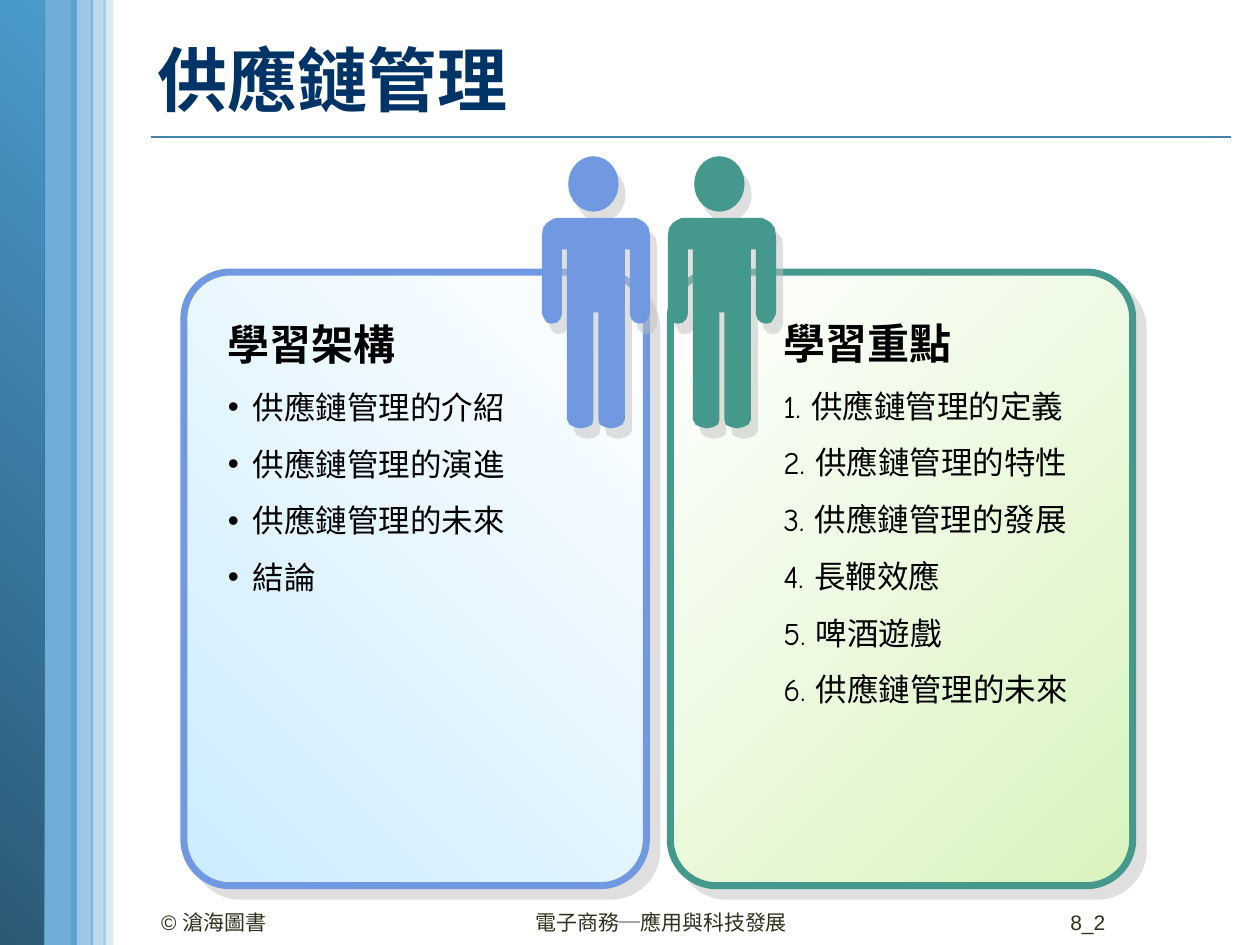
from dataclasses import dataclass
from math import cos, pi, sin

from lxml import etree
from pptx import Presentation
from pptx.dml.color import RGBColor
from pptx.enum.shapes import MSO_CONNECTOR, MSO_SHAPE
from pptx.enum.text import MSO_ANCHOR, MSO_AUTO_SIZE, PP_ALIGN
from pptx.oxml.ns import qn
from pptx.util import Inches, Pt

LEFT, RIGHT = PP_ALIGN.LEFT, PP_ALIGN.RIGHT
MIDDLE = MSO_ANCHOR.MIDDLE
GROW = MSO_AUTO_SIZE.SHAPE_TO_FIT_TEXT
RECT, ROUND = MSO_SHAPE.RECTANGLE, MSO_SHAPE.ROUNDED_RECTANGLE
STRAIGHT = MSO_CONNECTOR.STRAIGHT

COLORS = {
    "band": "4A9ACC", "deep": "2B5976", "rule": "4582A7", "title": "003366",
    "text": "000000", "foot": "30311D", "shade": "C0C0C0", "white": "FFFFFF",
    "blue": "7099E2", "sky": "CCECFF", "green": "44988C", "lime": "D8F4BE",
}
FONT = "Comic Neue"

# Left half of the body: distance from its axis, height on the slide
HALF = [
    (.29, 1.73), (.32, 1.73), (.36, 1.75), (.39, 1.77), (.42, 1.81), (.43, 1.88),
    (.43, 2.49), (.41, 2.53), (.39, 2.56), (.35, 2.57), (.31, 2.56), (.28, 2.53),
    (.27, 2.49), (.27, 1.98), (.23, 1.98), (.23, 3.33), (.21, 3.37), (.17, 3.39),
    (.12, 3.4), (.07, 3.39), (.03, 3.37), (.02, 3.33), (.02, 2.48),
]


@dataclass
class Band:
    left: float
    top: float
    width: float
    height: float
    alpha: int


@dataclass
class Panel:
    left: float
    color: str
    stops: tuple[str, str]
    angle: int
    axis: float
    box: tuple[float, float, float, float]
    head: str
    items: list[str]
    indent: float
    bullet: bool


@dataclass
class Footer:
    left: float
    width: float
    text: str
    align: PP_ALIGN


BANDS = [
    Band(.3, 0, .31, 7.53, 80), Band(.82, -.02, .08, 7.52, 20),
    Band(.56, 0, .18, 7.51, 54), Band(.72, 0, .12, 7.52, 37),
]
PANELS = [
    Panel(1.46, "blue", ("sky", "white"), 45, 4.73, (1.71, 2.28, 3.1, 2.52),
          "學習架構",
          ["供應鏈管理的介紹", "供應鏈管理的演進", "供應鏈管理的未來", "結論"],
          .2, True),
    Panel(5.32, "green", ("white", "lime"), 315, 5.73, (6.12, 2.27, 2.83, 3.48),
          "學習重點",
          ["1. 供應鏈管理的定義", "2. 供應鏈管理的特性", "3. 供應鏈管理的發展",
           "4. 長鞭效應", "5. 啤酒遊戲", "6. 供應鏈管理的未來"],
          .38, False),
]
FOOTERS = [
    Footer(1.18, 2.33, "© 滄海圖書", LEFT),
    Footer(4.15, 2.36, "電子商務─應用與科技發展", LEFT),
    Footer(8.15, .72, "8_2", RIGHT),
]


def tint(name: str) -> RGBColor:
    return RGBColor.from_string(COLORS[name])


def style(para, size: int, color: str, font: str = FONT, bold: bool = False) -> None:
    para.font.size, para.font.name, para.font.bold = Pt(size), font, bold
    para.font.color.rgb = tint(color)


def paint(shape, color: str, alpha: int = 100) -> None:
    shape.shadow.inherit = False
    shape.line.fill.background()
    shape.fill.solid()
    shape.fill.fore_color.rgb = tint(color)
    if alpha < 100:
        tone = shape.fill._xPr.find(f".//{qn('a:srgbClr')}")
        etree.SubElement(tone, qn("a:alpha"), val=str(alpha * 1000))


def blend(shape, stops: tuple[str, str], angle: int) -> None:
    shape.fill.gradient()
    shape.fill.gradient_angle = angle
    for stop, name in zip(shape.fill.gradient_stops, stops):
        stop.color.rgb = tint(name)


def shade(shape, dist: float, angle: int) -> None:
    shape.shadow.inherit = False
    effects = shape._element.spPr.find(qn("a:effectLst"))
    outer = etree.SubElement(effects, qn("a:outerShdw"), blurRad="0",
                             dist=str(Pt(dist)), dir=str(angle * 60000),
                             algn="ctr", rotWithShape="0")
    tone = etree.SubElement(outer, qn("a:srgbClr"), val=COLORS["shade"])
    etree.SubElement(tone, qn("a:alpha"), val="50000")


def add_rect(shapes, kind, *at: float):
    return shapes.add_shape(kind, *map(Inches, at))


def add_text(shapes, *at: float):
    frame = shapes.add_textbox(*map(Inches, at)).text_frame
    frame.word_wrap = True
    return frame


def add_person(shapes, axis: float, color: str) -> None:
    turns = [2 * pi * i / 28 for i in range(28)]
    head = [(axis - .02 + .2 * sin(t), 1.46 - .22 * cos(t)) for t in turns]
    body = [(axis - x, y) for x, y in HALF]
    body += [(axis + x, y) for x, y in reversed(HALF)]
    for points in (head, body):
        start, *rest = [(Inches(x), Inches(y)) for x, y in points]
        pen = shapes.build_freeform(*start)
        pen.add_line_segments(rest, close=True)
        part = pen.convert_to_shape()
        paint(part, color)
        shade(part, 7.2, 56)


def add_list(shapes, panel: Panel) -> None:
    frame = add_text(shapes, *panel.box)
    frame.auto_size = GROW
    para = frame.paragraphs[0]
    para.text, para.line_spacing = panel.head, 1.5
    style(para, 24, "text", bold=True)
    for item in panel.items:
        para = frame.add_paragraph()
        para.text, para.line_spacing = item, 1.5
        props = para._p.get_or_add_pPr()
        props.set("marL", str(Inches(panel.indent)))
        props.set("indent", str(-Inches(panel.indent)))
        if panel.bullet:
            etree.SubElement(props, qn("a:buFont"), typeface="Arial")
            etree.SubElement(props, qn("a:buChar"), char="•")
        style(para, 18, "text")


def add_panel(shapes, panel: Panel) -> None:
    card = add_rect(shapes, ROUND, panel.left, 2.16, 3.67, 4.87)
    card.adjustments[0] = .1
    blend(card, panel.stops, panel.angle)
    card.line.color.rgb, card.line.width = tint(panel.color), Pt(4)
    shade(card, 8.5, 45)
    add_person(shapes, panel.axis, panel.color)
    add_list(shapes, panel)


def main() -> None:
    deck = Presentation()
    deck.slide_width, deck.slide_height = Inches(10), Inches(7.5)
    slide = deck.slides.add_slide(deck.slide_layouts[5])
    shapes = slide.shapes

    # Side bands and title rule
    rule = shapes.add_connector(STRAIGHT, *map(Inches, (1.2, 1.09, 9.77, 1.09)))
    rule.line.color.rgb, rule.line.width = tint("rule"), Pt(1)
    etree.SubElement(rule._element.spPr, qn("a:effectLst"))
    first, *others = BANDS
    paint(add_rect(shapes, RECT, first.left, first.top, first.width, first.height),
          "band", first.alpha)
    edge = add_rect(shapes, RECT, -.01, 0, .36, 7.5)
    paint(edge, "band")
    blend(edge, ("deep", "band"), 45)
    for band in others:
        bar = add_rect(shapes, RECT, band.left, band.top, band.width, band.height)
        paint(bar, "band", band.alpha)

    # Title
    title = shapes.title
    title.left, title.top = Inches(1.15), Inches(.07)
    title.width, title.height = Inches(8.7), Inches(1.11)
    title.text_frame.vertical_anchor = MIDDLE
    para = title.text_frame.paragraphs[0]
    para.text, para.alignment = "供應鏈管理", LEFT
    style(para, 40, "title", bold=True)

    # Panels with their people
    for panel in PANELS:
        add_panel(shapes.add_group_shape().shapes, panel)

    # Footer
    for foot in FOOTERS:
        para = add_text(shapes, foot.left, 7.17, foot.width, .26).paragraphs[0]
        para.text, para.alignment = foot.text, foot.align
        style(para, 12, "foot", "Arial")

    deck.save("out.pptx")


if __name__ == "__main__":
    main()
